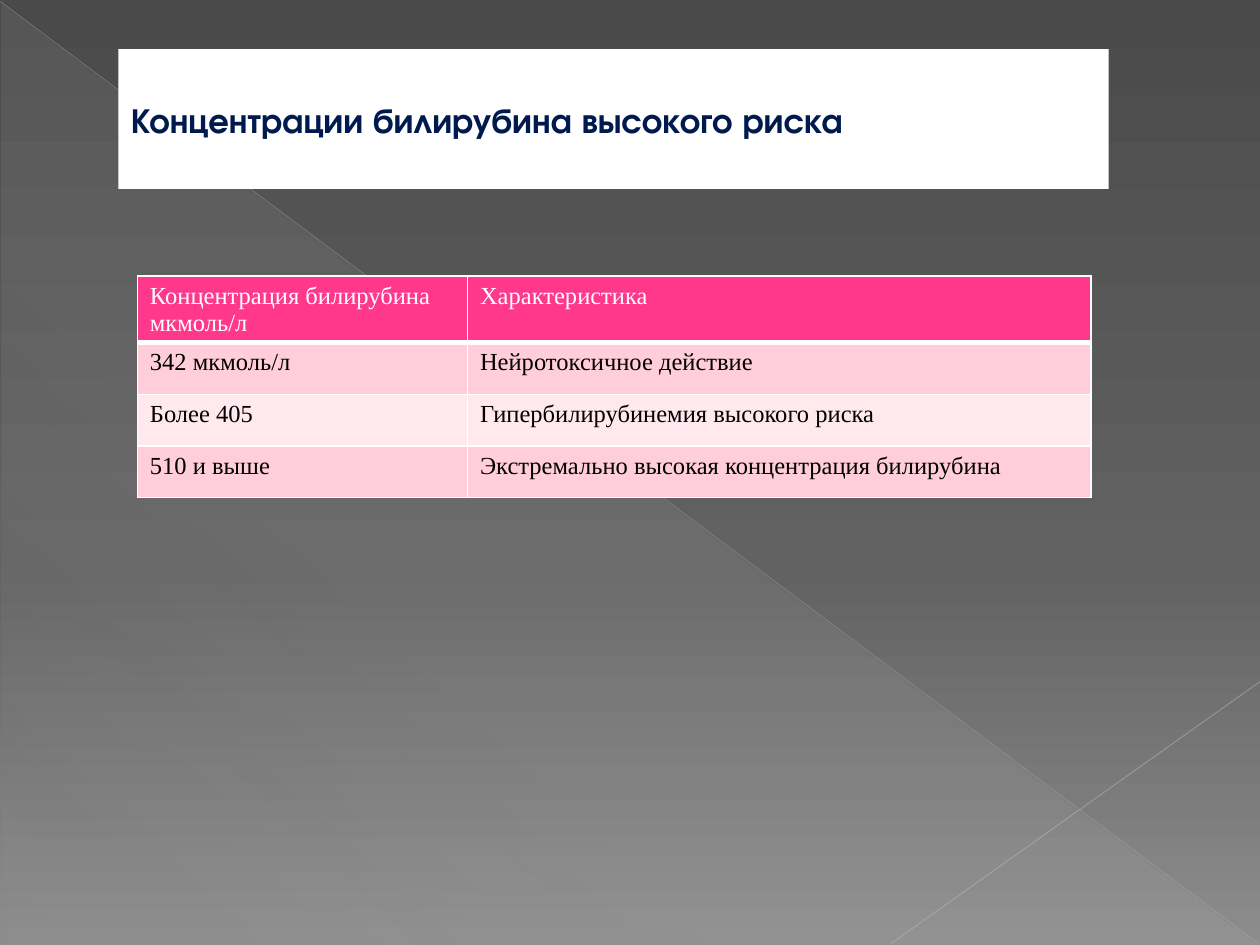
"""Build a slide with a table of high-risk bilirubin concentrations."""
import dataclasses

import lxml.etree
import pptx
import pptx.dml.color
import pptx.enum.shapes
import pptx.enum.text
import pptx.oxml.ns
import pptx.util

Inches = pptx.util.Inches
qn = pptx.oxml.ns.qn


@dataclasses.dataclass(frozen=True)
class Theme:
    white: str = "FFFFFF"
    black: str = "000000"
    navy: str = "001A4F"
    header: str = "FF388C"
    bands: tuple = ("FFCEDA", "FFE8EE")
    background: tuple = ((0, "4A4A4A", 100), (60, "626262", 100), (100, "8C8C8C", 100))
    sheen: tuple = ((0, "D2D2D2", 10), (70, "D2D2D2", 8), (100, "D2D2D2", 1))
    title_font: str = "TeX Gyre Adventor"
    table_font: str = "Times New Roman"
    title_size: int = 20
    table_size: int = 14


def rgb(value):
    return pptx.dml.color.RGBColor.from_string(value)


def add_color(parent, value, opacity=100):
    color = lxml.etree.SubElement(parent, qn("a:srgbClr"), val=value)
    if opacity < 100:
        lxml.etree.SubElement(color, qn("a:alpha"), val=str(opacity * 1000))


class SlideBuilder:
    def __init__(self, slide, theme):
        self.slide = slide
        self.theme = theme

    def gradient(self, owner, fill, stops, angle):
        fill.gradient()
        fill.gradient_angle = 360 - angle
        stop_list = next(owner.element.iter(qn("a:gsLst")))
        for stop in list(stop_list):
            stop_list.remove(stop)
        for position, color, opacity in stops:
            stop = lxml.etree.SubElement(stop_list, qn("a:gs"), pos=str(position * 1000))
            add_color(stop, color, opacity)

    def background(self):
        self.gradient(self.slide, self.slide.background.fill, self.theme.background, 90)

    def shape(self, kind, *box):
        shape = self.slide.shapes.add_shape(kind, *map(Inches, box))
        shape.shadow.inherit = False
        shape.line.fill.background()
        return shape

    def sheen(self, *box):
        triangle = self.shape(pptx.enum.shapes.MSO_SHAPE.RIGHT_TRIANGLE, *box)
        self.gradient(triangle, triangle.fill, self.theme.sheen, 133)

    def line(self, start, end, color, width, opacity):
        connector = self.slide.shapes.add_connector(
            pptx.enum.shapes.MSO_CONNECTOR.STRAIGHT, *map(Inches, start + end))
        connector.line.width = pptx.util.Pt(width)
        connector.line.fill.solid()
        connector.line.color.rgb = rgb(color)
        solid = next(connector.element.iter(qn("a:solidFill")))
        solid.clear()
        add_color(solid, color, opacity)
        lxml.etree.SubElement(connector.element.spPr, qn("a:effectLst"))

    def text(self, text_frame, text, color, **font_format):
        paragraph = text_frame.paragraphs[0]
        paragraph.alignment = pptx.enum.text.PP_ALIGN.LEFT
        run = paragraph.add_run()
        run.text = text
        run.font.color.rgb = rgb(color)
        for name, value in font_format.items():
            setattr(run.font, name, value)

    def title(self, text, *box):
        shape = self.shape(pptx.enum.shapes.MSO_SHAPE.RECTANGLE, *box)
        shape.fill.solid()
        shape.fill.fore_color.rgb = rgb(self.theme.white)
        shape.text_frame.word_wrap = True
        shape.text_frame.vertical_anchor = pptx.enum.text.MSO_ANCHOR.MIDDLE
        self.text(shape.text_frame, text, self.theme.navy, name=self.theme.title_font,
                  size=pptx.util.Pt(self.theme.title_size), bold=True)

    def borders(self, cell, widths):
        properties = cell._tc.get_or_add_tcPr()
        for index, (side, width) in enumerate(widths.items()):
            border = lxml.etree.Element(qn(f"a:ln{side}"), w=str(pptx.util.Pt(width)))
            add_color(lxml.etree.SubElement(border, qn("a:solidFill")), self.theme.white)
            properties.insert(index, border)

    def table(self, rows, left, top, column_widths, row_height):
        frame = self.slide.shapes.add_table(
            len(rows), len(column_widths), Inches(left), Inches(top),
            Inches(sum(column_widths)), Inches(row_height * len(rows)))
        table = frame.table
        table.horz_banding = False
        for column, width in zip(table.columns, column_widths):
            column.width = Inches(width)
        for row_index, texts in enumerate(rows):
            is_header = row_index == 0
            fill = self.theme.header if is_header else self.theme.bands[(row_index - 1) % 2]
            color = self.theme.white if is_header else self.theme.black
            widths = {"L": 1, "R": 1, "T": 3 if row_index == 1 else 1, "B": 3 if is_header else 1}
            for column_index, text in enumerate(texts):
                cell = table.cell(row_index, column_index)
                cell.fill.solid()
                cell.fill.fore_color.rgb = rgb(fill)
                self.borders(cell, widths)
                self.text(cell.text_frame, text, color, name=self.theme.table_font,
                          size=pptx.util.Pt(self.theme.table_size), bold=False)


def main():
    presentation = pptx.Presentation()
    presentation.slide_width = Inches(10)
    presentation.slide_height = Inches(7.5)
    slide = presentation.slides.add_slide(presentation.slide_layouts[6])
    builder = SlideBuilder(slide, Theme())
    builder.background()
    builder.sheen(0.01, 0.02, 9.98, 7.48)
    builder.line((0, 0.01), (9.99, 7.49), "BFBFBF", 0.39, 35)
    builder.line((10, 5.41), (7.07, 7.49), "C6C6C6", 0.47, 45)
    builder.title("Концентрации билирубина высокого риска", 0.94, 0.39, 7.86, 1.11)
    builder.table([
        ("Концентрация билирубина мкмоль/л", "Характеристика"),
        ("342 мкмоль/л", "Нейротоксичное действие"),
        ("Более 405", "Гипербилирубинемия высокого риска"),
        ("510 и выше", "Экстремально высокая концентрация билирубина"),
    ], 1.09, 2.19, (2.62, 4.95), 0.41)
    presentation.save("out.pptx")


if __name__ == "__main__":
    main()
